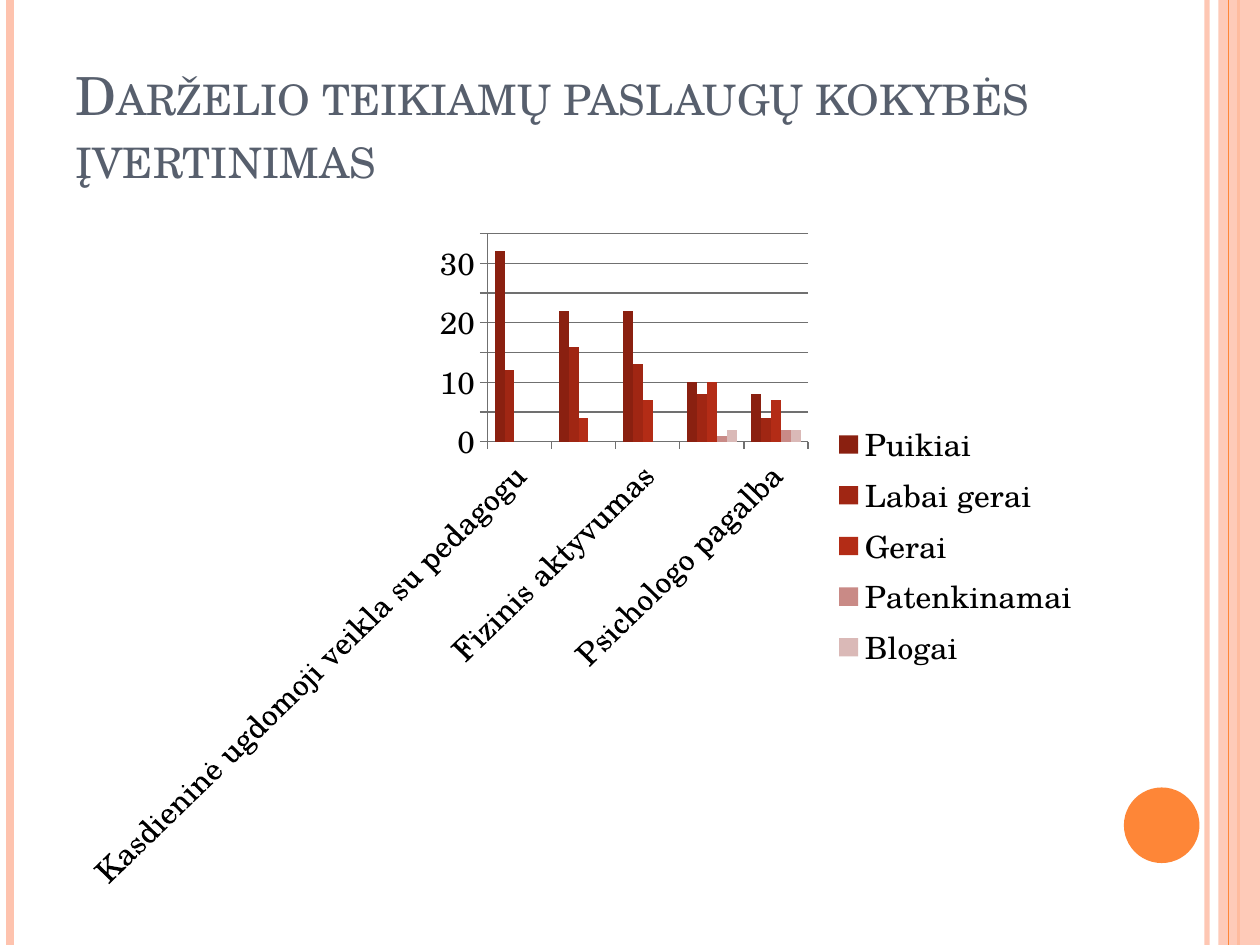
from pptx import Presentation
from pptx.chart.data import CategoryChartData
from pptx.dml.color import RGBColor
from pptx.enum.chart import XL_CHART_TYPE, XL_LEGEND_POSITION, XL_TICK_MARK
from pptx.enum.shapes import MSO_CONNECTOR, MSO_SHAPE
from pptx.enum.text import MSO_ANCHOR
from pptx.oxml.ns import qn
from pptx.util import Inches, Pt
from lxml import etree

COLUMN = XL_CHART_TYPE.COLUMN_CLUSTERED
RIGHT = XL_LEGEND_POSITION.RIGHT
OUT = XL_TICK_MARK.OUTSIDE
LINE = MSO_CONNECTOR.STRAIGHT
RECT, OVAL = MSO_SHAPE.RECTANGLE, MSO_SHAPE.OVAL
BOTTOM = MSO_ANCHOR.BOTTOM

FONT = "TeX Gyre Schola"
PINK = RGBColor(0xFE, 0xC3, 0xAE)
ORANGE = RGBColor(0xFE, 0x86, 0x37)
SLATE = RGBColor(0x57, 0x5F, 0x6D)
BLACK = RGBColor(0, 0, 0)
GREY = RGBColor(0x70, 0x70, 0x70)

# Content
TITLE = "Darželio teikiamų paslaugų kokybės įvertinimas"
CATS = ["Kasdieninė ugdomoji veikla su pedagogu", "Meninis ugdymas",
        "Fizinis aktyvumas", "Logopedo pagalba", "Psichologo pagalba"]
SERIES = [
    ("Puikiai", (32, 22, 22, 10, 8), RGBColor(0x8A, 0x20, 0x10)),
    ("Labai gerai", (12, 16, 13, 8, 4), RGBColor(0xA0, 0x26, 0x13)),
    ("Gerai", (None, 4, 7, 10, 7), RGBColor(0xB3, 0x2C, 0x16)),
    ("Patenkinamai", (None, None, None, 1, 2), RGBColor(0xC9, 0x8A, 0x86)),
    ("Blogai", (None, None, None, 2, 2), RGBColor(0xDA, 0xB9, 0xB7)),
]
# Stripes: x, colour, width in points, opacity in percent
BACK = [(9.58, PINK, 3, 93), (0.08, PINK, 4.5, 100), (9.83, ORANGE, 1.5, 100)]
FRONT = [(9.75, ORANGE, 0.75, 100)]

# Layout in inches
WIDTH, HEIGHT = 10, 7.5
LEFT, SPAN = 0.5, 8.17
BAND = 0.33

deck = Presentation()
deck.slide_width, deck.slide_height = Inches(WIDTH), Inches(HEIGHT)
slide = deck.slides.add_slide(deck.slide_layouts[6])
shapes = slide.shapes


def fade(part, share):
    """Set the opacity of the solid colour inside a part."""
    if share < 100:
        color = next(part.iter(qn("a:srgbClr")))
        etree.SubElement(color, qn("a:alpha")).set("val", str(share * 1000))


def stripe(x, color, width, share):
    line = shapes.add_connector(LINE, Inches(x), 0, Inches(x), Inches(HEIGHT))
    line.line.color.rgb = color
    line.line.width = Pt(width)
    props = line._element.spPr
    fade(props, share)
    etree.SubElement(props, qn("a:effectLst"))


def block(kind, box, color, share=100):
    shape = shapes.add_shape(kind, *map(Inches, box))
    shape.shadow.inherit = False
    shape.fill.solid()
    shape.fill.fore_color.rgb = color
    shape.line.fill.background()
    fade(shape._element.spPr, share)


# Side stripes and disc
for row in BACK:
    stripe(*row)
block(RECT, (WIDTH - BAND, 0, BAND, HEIGHT), PINK, 87)
for row in FRONT:
    stripe(*row)
block(OVAL, (8.92, 6.25, 0.6, 0.6), ORANGE)

# Title
box = shapes.add_textbox(*map(Inches, (LEFT, 0.3, SPAN, 1.25)))
frame = box.text_frame
frame.word_wrap = True
frame.vertical_anchor = BOTTOM
frame.text = TITLE
run = frame.paragraphs[0].runs[0]
run.font.name, run.font.size = FONT, Pt(30)
run.font.color.rgb = SLATE
run.font._element.set("cap", "small")

# Chart
data = CategoryChartData()
data.categories = CATS
for name, vals, _ in SERIES:
    data.add_series(name, vals)
chart = shapes.add_chart(
    COLUMN, *map(Inches, (LEFT, 1.75, SPAN, 5.33)), data).chart
chart.has_title = False
chart.font.name, chart.font.size = FONT, Pt(18)
chart.font.color.rgb = BLACK
chart.has_legend = True
chart.legend.position = RIGHT
chart.legend.include_in_layout = False

plot = chart.plots[0]
plot.gap_width, plot.overlap, plot.vary_by_categories = 150, 0, False
for series, (_, _, color) in zip(plot.series, SERIES):
    series.format.fill.solid()
    series.format.fill.fore_color.rgb = color

# Axes
cat, val = chart.category_axis, chart.value_axis
for axis in (cat, val):
    axis.major_tick_mark = OUT
    axis.format.line.color.rgb = GREY
    axis.tick_labels.font.size = Pt(18)
val.minimum_scale, val.maximum_scale, val.major_unit = 0, 35, 5
val.has_major_gridlines = True
val.major_gridlines.format.line.color.rgb = GREY
turn = cat._element.find(qn("c:txPr")).find(qn("a:bodyPr"))
turn.set("rot", "-2700000")
turn.set("vert", "horz")

deck.save("out.pptx")
